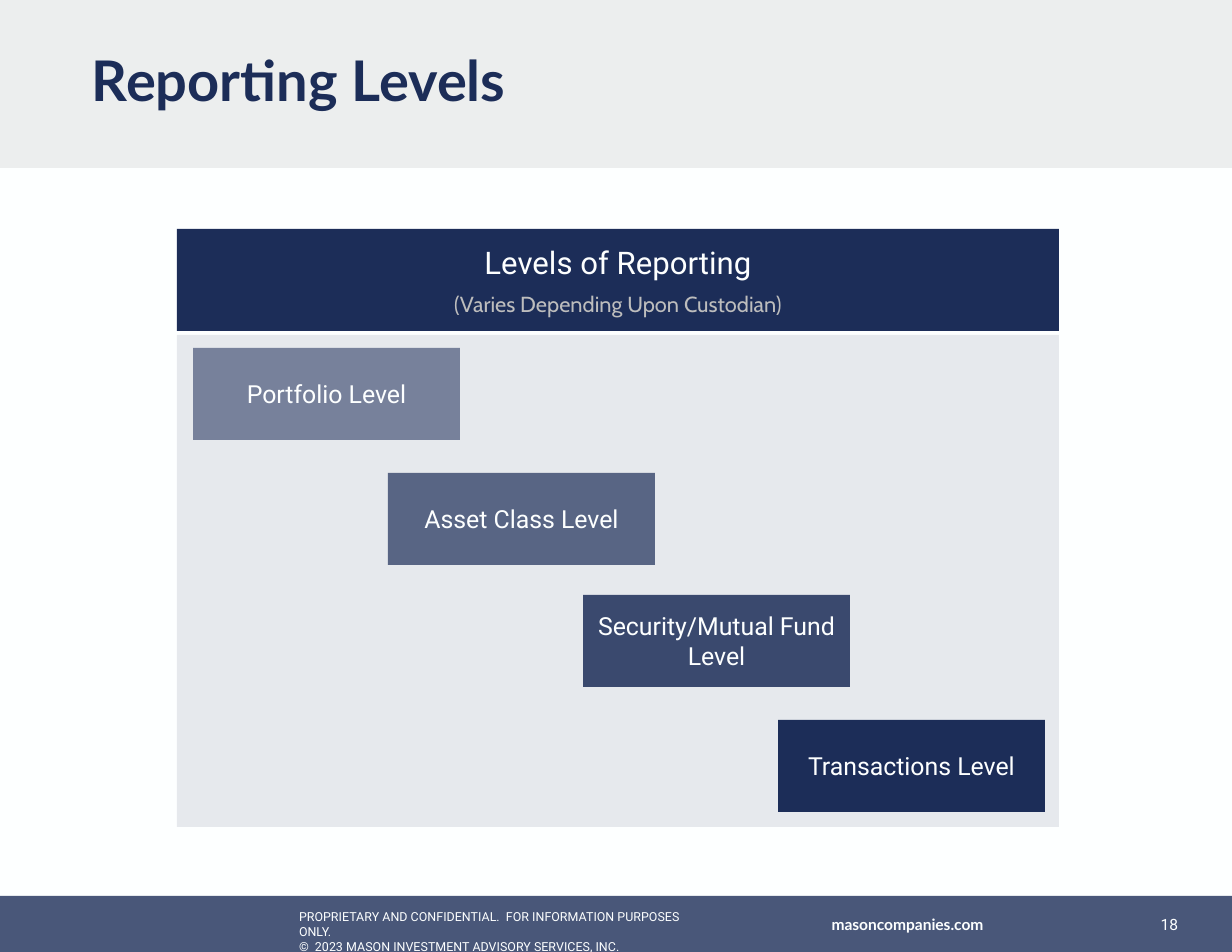
from typing import NamedTuple

from lxml.etree import SubElement
from pptx import Presentation
from pptx.dml.color import RGBColor
from pptx.enum.shapes import MSO_SHAPE as Shape
from pptx.enum.text import MSO_ANCHOR as Anchor, MSO_AUTO_SIZE as AutoSize, PP_ALIGN as Align
from pptx.oxml.ns import qn
from pptx.util import Emu, Pt

SCALE = 914400 / 112  # EMU in one px
COLORS = {"navy": "1C2D58", "white": "FDFFFF", "band": "ECEEEE", "gray": "BDBDBD"}


class Area(NamedTuple):
    left: int
    top: int
    width: int
    height: int


class Line(NamedTuple):
    text: str
    size: int
    font: str = "Roboto"
    color: str = "white"
    bold: bool = False
    before: int = 0


class Level(NamedTuple):
    name: str
    top: int
    opacity: int


LEVELS = [
    Level("Portfolio Level", 348, 55),
    Level("Asset Class Level", 473, 70),
    Level("Security/Mutual Fund Level", 595, 85),
    Level("Transactions Level", 720, 100),
]
LEVEL_LEFT, LEVEL_STEP, LEVEL_WIDTH, LEVEL_HEIGHT = 193, 195, 267, 92


def px(length: int) -> Emu:
    return Emu(round(length * SCALE))


def rgb(name: str) -> RGBColor:
    return RGBColor.from_string(COLORS[name])


def write(frame, lines: list[Line], align: Align, anchor: Anchor = Anchor.MIDDLE) -> None:
    frame.word_wrap = True
    frame.auto_size = AutoSize.NONE
    frame.vertical_anchor = anchor
    for index, line in enumerate(lines):
        para = frame.add_paragraph() if index else frame.paragraphs[0]
        para.text = line.text
        para.alignment = align
        if line.before:
            para.space_before = Pt(line.before)
        font = para.font
        font.name, font.size, font.bold = line.font, Pt(line.size), line.bold
        font.color.rgb = rgb(line.color)


def clear_margins(frame) -> None:
    frame.margin_left = frame.margin_top = frame.margin_right = frame.margin_bottom = 0


def add_block(page, area: Area, color: str, opacity: int = 100, lines: tuple[Line, ...] = ()) -> None:
    block = page.shapes.add_shape(Shape.RECTANGLE, *map(px, area))
    block.shadow.inherit = False
    block.line.fill.background()
    block.fill.solid()
    block.fill.fore_color.rgb = rgb(color)
    if opacity < 100:
        tint = block.element.spPr.find(f"{qn('a:solidFill')}/{qn('a:srgbClr')}")
        SubElement(tint, qn("a:alpha"), val=str(opacity * 1000))
    if lines:
        write(block.text_frame, lines, Align.CENTER)


def add_label(page, area: Area, lines: list[Line], align: Align, anchor: Anchor = Anchor.MIDDLE) -> None:
    box = page.shapes.add_textbox(*map(px, area))
    clear_margins(box.text_frame)
    write(box.text_frame, lines, align, anchor)


def main() -> None:
    deck = Presentation()
    deck.slide_width, deck.slide_height = px(1232), px(952)
    page = deck.slides.add_slide(deck.slide_layouts[5])
    page.background.fill.solid()
    page.background.fill.fore_color.rgb = rgb("white")

    # Footer
    add_block(page, Area(0, 896, 1232, 56), "navy", 80)
    add_label(page, Area(682, 896, 451, 56),
              [Line("masoncompanies.com", 10, "Lato", bold=True)], Align.CENTER)
    add_label(page, Area(928, 896, 250, 56), [Line("18", 10)], Align.RIGHT)
    add_label(page, Area(299, 909, 396, 30), [
        Line("PROPRIETARY AND CONFIDENTIAL.  FOR INFORMATION PURPOSES ONLY.", 8),
        Line("©  2023 MASON INVESTMENT ADVISORY SERVICES, INC.", 8),
    ], Align.LEFT, Anchor.TOP)

    # Title, brought in front of its band
    add_block(page, Area(0, 0, 1232, 168), "band")
    title = page.shapes.title
    page.shapes.element.append(title.element)
    title.left, title.top, title.width, title.height = map(px, Area(92, 19, 1028, 129))
    clear_margins(title.text_frame)
    write(title.text_frame, [Line("Reporting Levels", 36, "Lato", "navy", True)], Align.LEFT)
    title.text_frame.paragraphs[0].line_spacing = 0.9

    # Panel with the levels stepping down to the right
    add_block(page, Area(177, 335, 882, 492), "navy", 10)
    for index, level in enumerate(LEVELS):
        left = LEVEL_LEFT + index * LEVEL_STEP
        add_block(page, Area(left, level.top, LEVEL_WIDTH, LEVEL_HEIGHT), "navy",
                  level.opacity, (Line(level.name, 16),))

    # Panel heading
    add_block(page, Area(177, 229, 882, 102), "navy", lines=(
        Line("Levels of Reporting", 20),
        Line("(Varies Depending Upon Custodian)", 14, "Cabin", "gray", before=6),
    ))

    deck.save("out.pptx")


if __name__ == "__main__":
    main()
